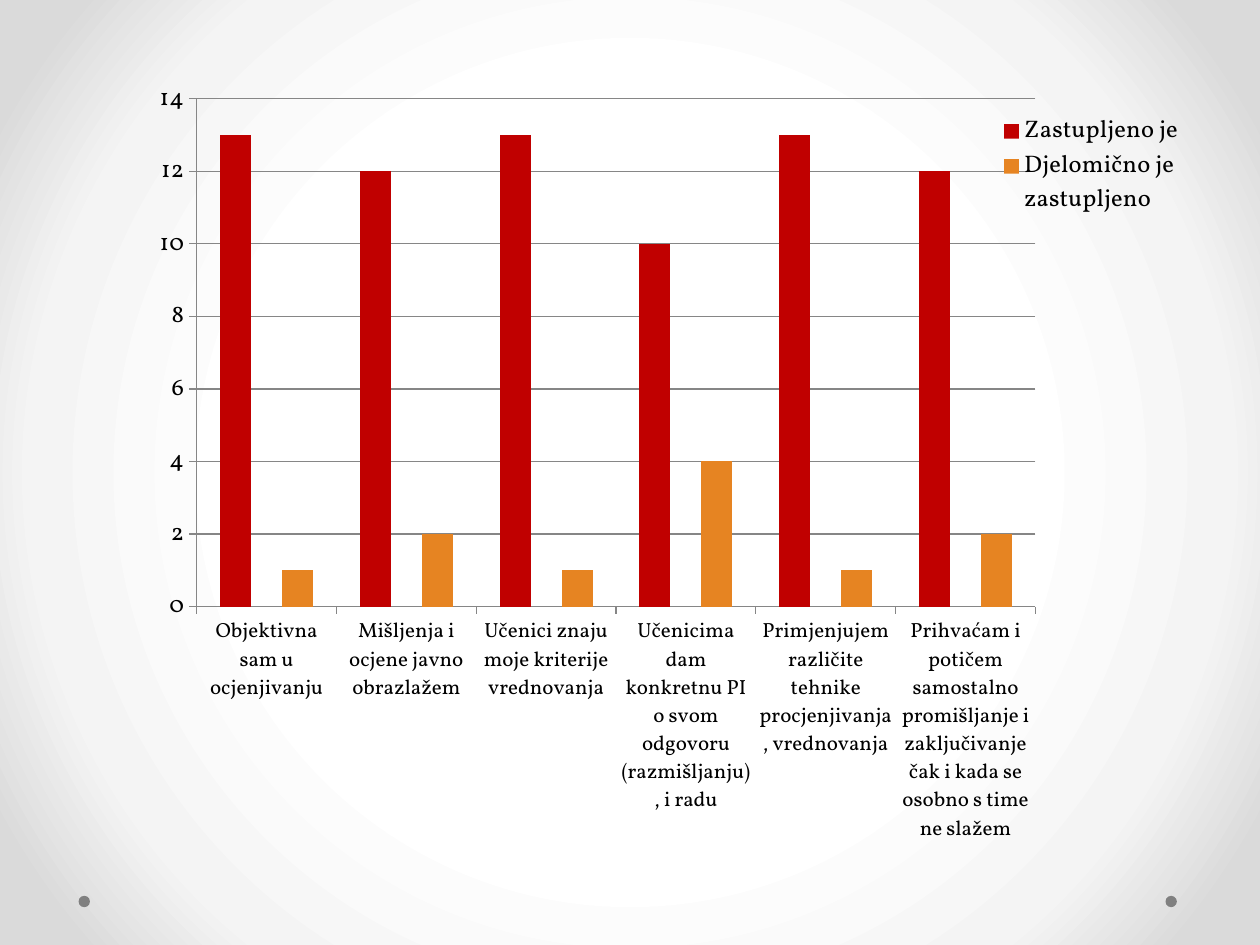
from lxml import etree
from pptx import Presentation
from pptx import util as u
from pptx.chart.data import CategoryChartData
from pptx.dml.color import RGBColor
from pptx.enum import chart as charts, shapes
from pptx.oxml import parse_xml
from pptx.oxml.ns import nsdecls, qn

Pt = u.Pt


def color(hex_string):
    return RGBColor.from_string(hex_string)


def manual_layout(x, y, w, h, inner=False):
    """Return a c:layout element; values are fractions of the chart frame."""
    target = '<c:layoutTarget val="inner"/>' if inner else ""
    return parse_xml(
        f'<c:layout {nsdecls("c")}><c:manualLayout>{target}'
        '<c:xMode val="edge"/><c:yMode val="edge"/>'
        f'<c:x val="{x}"/><c:y val="{y}"/><c:w val="{w}"/><c:h val="{h}"/>'
        "</c:manualLayout></c:layout>"
    )


deck = Presentation()
deck.slide_width, deck.slide_height = Pt(720), Pt(540)
page = deck.slides.add_slide(deck.slide_layouts[6])

# Background: radial gradient, white in the middle
page.background.fill.gradient()
gradient = page.element.xpath(".//a:gradFill")[0]
for child in list(gradient):
    gradient.remove(child)
stops = "".join(
    f'<a:gs pos="{percent * 1000}"><a:srgbClr val="{shade}"/></a:gs>'
    for percent, shade in [(50, "FFFFFF"), (76, "F4F4F4"), (92, "DADADA")]
)
gradient.append(parse_xml(f'<a:gsLst {nsdecls("a")}>{stops}</a:gsLst>'))
gradient.append(parse_xml(
    f'<a:path {nsdecls("a")} path="circle">'
    '<a:fillToRect l="50000" t="50000" r="50000" b="50000"/></a:path>'
))

# Corner dots
for left in (666, 44.9):
    dot = page.shapes.add_shape(
        shapes.MSO_SHAPE.OVAL, Pt(left), Pt(511.9), Pt(6.5), Pt(6.5))
    dot.shadow.inherit = False
    dot.fill.solid()
    dot.fill.fore_color.rgb = color("808080")
    dot.line.fill.background()

# Column chart; the empty middle series keeps a gap between the bars
data = CategoryChartData()
data.categories = [
    "Objektivna sam u ocjenjivanju",
    "Mišljenja i ocjene javno obrazlažem",
    "Učenici znaju moje kriterije vrednovanja",
    "Učenicima dam konkretnu PI o svom odgovoru (razmišljanju), i radu",
    "Primjenjujem različite tehnike procjenjivanja, vrednovanja",
    "Prihvaćam i potičem samostalno promišljanje i zaključivanje "
    "čak i kada se osobno s time ne slažem",
]
series_table = [
    ("Zastupljeno je", [13, 12, 13, 10, 13, 12], "C00000"),
    ("Series 2", [None] * 6, "9C5252"),
    ("Djelomično je zastupljeno", [1, 2, 1, 4, 1, 2], "E68422"),
]
for name, values, _ in series_table:
    data.add_series(name, values)

chart = page.shapes.add_chart(
    charts.XL_CHART_TYPE.COLUMN_CLUSTERED,
    Pt(36), Pt(43.2), Pt(653), Pt(439.2), data).chart
chart.has_title = False
chart.font.name = "Vollkorn"
chart.font.size = Pt(10)
chart.font.color.rgb = color("000000")

plot = chart.plots[0]
plot.gap_width = 150
plot.overlap = 0
plot.vary_by_categories = False
for series, (_, _, fill) in zip(plot.series, series_table):
    series.format.fill.solid()
    series.format.fill.fore_color.rgb = color(fill)

for axis, size in ((chart.category_axis, 12), (chart.value_axis, 14)):
    axis.tick_labels.font.size = Pt(size)
    axis.major_tick_mark = charts.XL_TICK_MARK.OUTSIDE
    axis.format.line.color.rgb = color("868686")
    axis.format.line.width = Pt(0.75)
scale = chart.value_axis
for name, value in {"minimum_scale": 0, "maximum_scale": 14,
                    "major_unit": 2, "has_major_gridlines": True}.items():
    setattr(scale, name, value)
scale.major_gridlines.format.line.color.rgb = color("868686")
scale.major_gridlines.format.line.width = Pt(0.75)

chart.has_legend = True
legend = chart.legend
legend.position = charts.XL_LEGEND_POSITION.RIGHT
legend.include_in_layout = False
legend.font.size = Pt(14)

# Fixed places for plot and legend, and no legend entry for the empty series
chart_xml = chart.element if hasattr(chart, "element") else chart._chartSpace
plot_area = chart_xml.xpath(".//c:plotArea")[0]
legend_xml = chart_xml.xpath(".//c:legend")[0]
for parent in (plot_area, legend_xml):
    for old in parent.findall(qn("c:layout")):
        parent.remove(old)
plot_area.insert(0, manual_layout(0.117, 0.031, 0.734, 0.677, inner=True))
overlay = legend_xml.find(qn("c:overlay"))
overlay.addprevious(parse_xml(
    f'<c:legendEntry {nsdecls("c")}><c:idx val="1"/><c:delete val="1"/></c:legendEntry>'
))
overlay.addprevious(manual_layout(0.81, 0.05, 0.18, 0.14))

deck.save("out.pptx")
